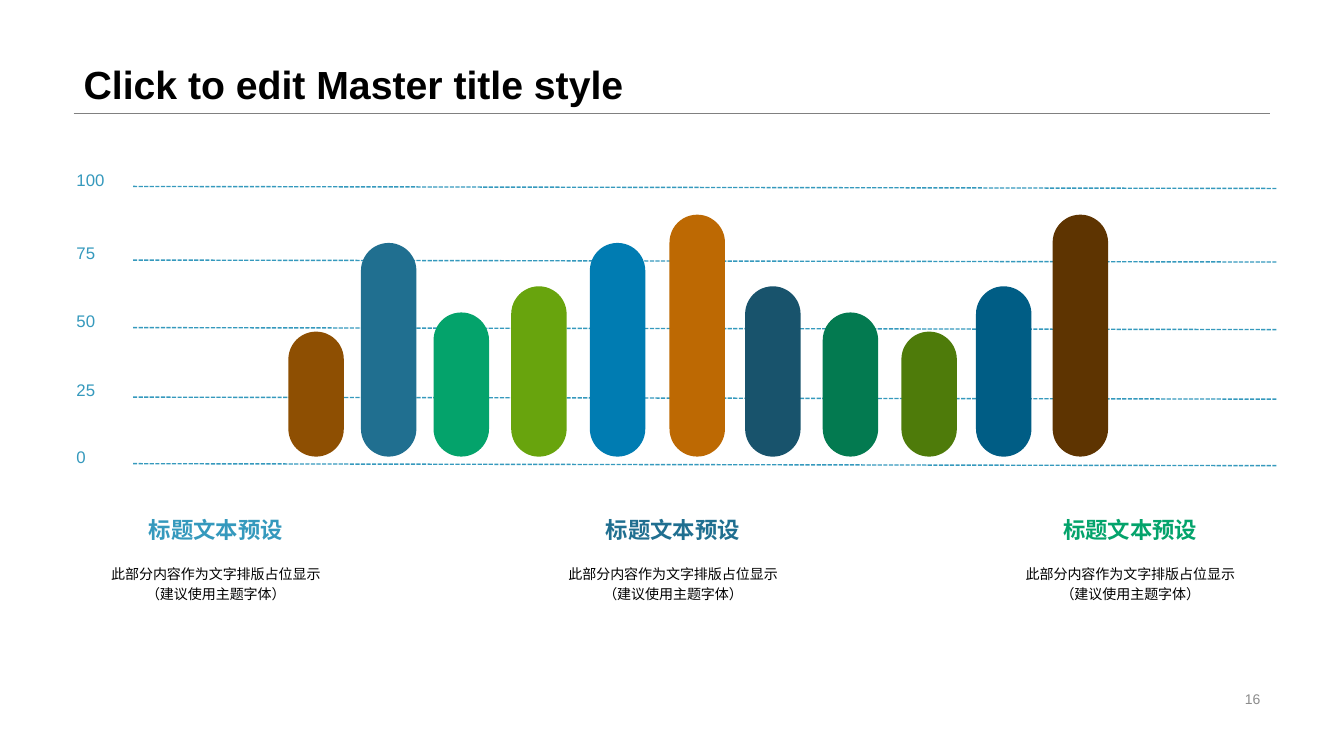
import pptx
import pptx.util
import pptx.dml.color
import pptx.enum.dml
import pptx.enum.shapes
import pptx.enum.text
import lxml.etree
from dataclasses import dataclass

Inches = pptx.util.Inches
Pt = pptx.util.Pt
RGB = pptx.dml.color.RGBColor.from_string
ALIGN = pptx.enum.text.PP_ALIGN
ANCHOR = pptx.enum.text.MSO_ANCHOR

TITLE = "Click to edit Master title style"
PAGE = "16"
SCALE = [("100", 1.63, 0.48), ("75", 2.36, 0.39), ("50", 3.03, 0.39),
         ("25", 3.72, 0.39), ("0", 4.38, 0.29)]
BARS = [(2.86, 1.24, "8E4F02"), (3.58, 2.12, "206F90"), (4.3, 1.43, "04A36B"),
        (5.07, 1.69, "68A40D"), (5.85, 2.12, "007CB2"), (6.64, 2.4, "BD6903"),
        (7.39, 1.69, "18536C"), (8.16, 1.43, "037A50"), (8.94, 1.24, "4E7B0A"),
        (9.68, 1.69, "005D85"), (10.44, 2.4, "5E3401")]
HEADING = "标题文本预设"
BODY = "此部分内容作为文字排版占位显示\n（建议使用主题字体）"
COLUMN_COLORS = ["3599BD", "206F90", "04A36B"]


@dataclass
class Theme:
    font: str = "Arial"
    text: str = "000000"
    rule: str = "808080"
    page: str = "8C8C8C"
    scale: str = "3599BD"
    title_pt: int = 28
    heading_pt: int = 16
    scale_pt: int = 12
    small_pt: int = 10


theme = Theme()
BAR_WIDTH, BAR_BOTTOM = 0.55, 4.53
COLUMN_CENTER, COLUMN_STEP = 2.14, 4.535


def write(s, text, size, color, bold=False, wrap=True, anchor=ANCHOR.TOP,
          align=ALIGN.LEFT, spacing=1.0):
    tf = s.text_frame
    frame = {"word_wrap": wrap, "vertical_anchor": anchor,
             "auto_size": pptx.enum.text.MSO_AUTO_SIZE.NONE}
    for name, value in frame.items():
        setattr(tf, name, value)
    p = tf.paragraphs[0]
    p.text = text
    p.alignment, p.line_spacing = align, spacing
    for r in p.runs:
        for name, value in {"name": theme.font, "size": Pt(size), "bold": bold}.items():
            setattr(r.font, name, value)
        r.font.color.rgb = RGB(color)


def add_text(box, *args, **formats):
    write(sp.add_textbox(*map(Inches, box)), *args, **formats)


def add_line(ends, color, width, dash=None):
    s = sp.add_connector(pptx.enum.shapes.MSO_CONNECTOR.STRAIGHT, *map(Inches, ends))
    s.line.color.rgb = RGB(color)
    s.line.width = Pt(width)
    if dash:
        s.line.dash_style = dash
    lxml.etree.SubElement(s._element.spPr, pptx.oxml.ns.qn("a:effectLst"))


prs = pptx.Presentation()
prs.slide_width, prs.slide_height = Inches(13.33), Inches(7.5)
slide = prs.slides.add_slide(prs.slide_layouts[5])
sp = slide.shapes

add_line((0.73, 1.12, 12.6, 1.12), theme.rule, 0.25)
title = sp.title
for name, value in {"left": 0.73, "top": 0, "width": 11.87, "height": 1.12}.items():
    setattr(title, name, Inches(value))
write(title, TITLE, theme.title_pt, theme.text, bold=True, anchor=ANCHOR.BOTTOM, spacing=0.9)
add_text((9.42, 6.82, 3.18, 0.23), PAGE, theme.small_pt, theme.page,
         anchor=ANCHOR.MIDDLE, align=ALIGN.RIGHT)

for label, top, width in SCALE:
    add_text((0.66, top, width, 0.3), label, theme.scale_pt, theme.scale, wrap=False)
    add_line((1.32, top + 0.22, 12.66, top + 0.24), theme.scale, 1,
             pptx.enum.dml.MSO_LINE.SQUARE_DOT)

for left, height, color in BARS:
    s = sp.add_shape(pptx.enum.shapes.MSO_SHAPE.ROUNDED_RECTANGLE,
                     *map(Inches, (left, BAR_BOTTOM - height, BAR_WIDTH, height)))
    s.adjustments[0] = 0.5
    s.shadow.inherit = False
    s.fill.solid()
    s.fill.fore_color.rgb = RGB(color)
    s.line.fill.background()

for i, color in enumerate(COLUMN_COLORS):
    center = COLUMN_CENTER + i * COLUMN_STEP
    add_text((center - 0.775, 5.07, 1.55, 0.5), HEADING, theme.heading_pt, color,
             bold=True, wrap=False, align=ALIGN.CENTER)
    add_text((center - 1.34, 5.53, 2.68, 0.61), BODY, theme.small_pt, theme.text,
             align=ALIGN.CENTER, spacing=1.2)

prs.save("out.pptx")
